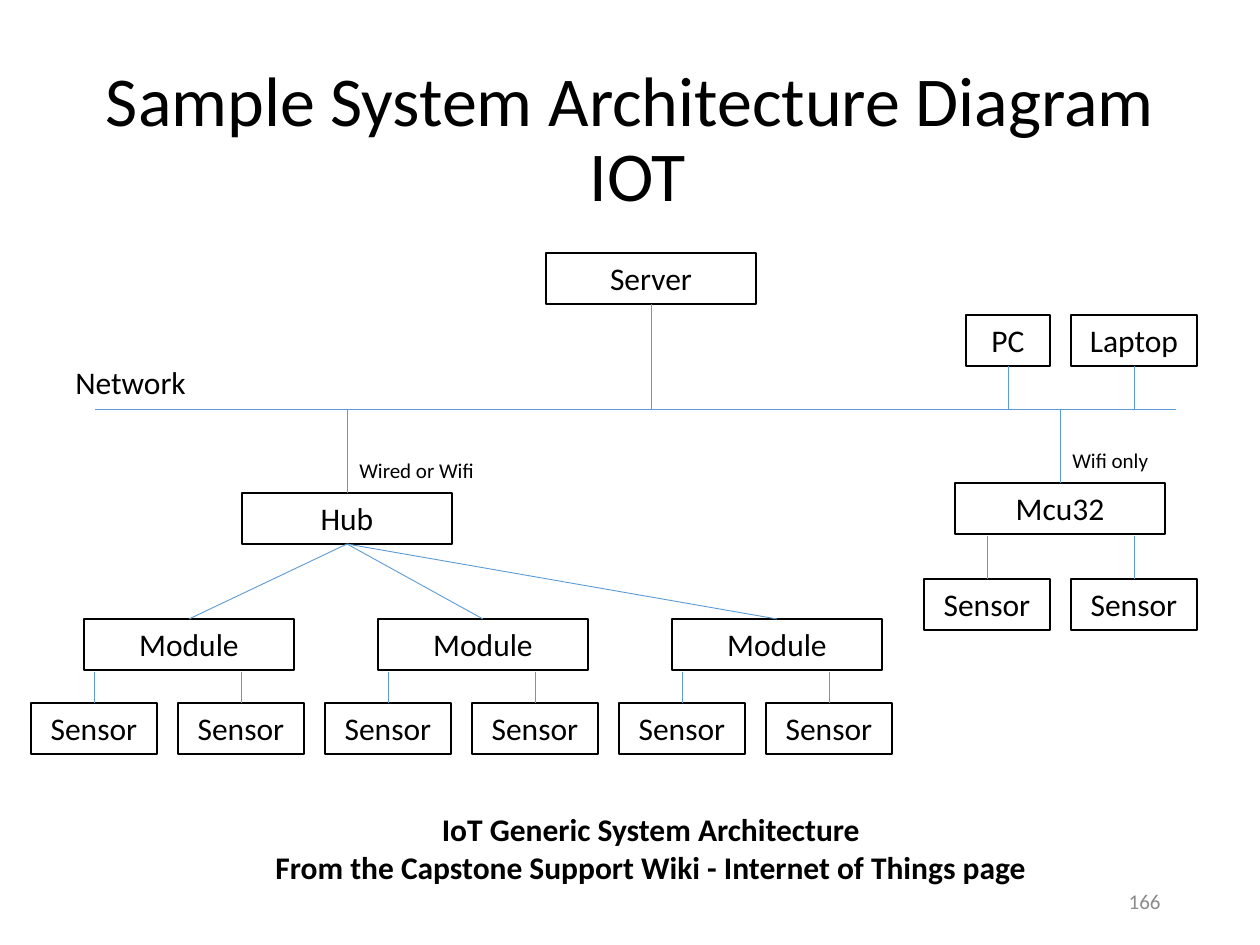
from lxml import etree
from pptx import Presentation
from pptx import util as u
from pptx.dml.color import RGBColor
from pptx.enum import shapes, text
from pptx.oxml.ns import qn

PX = 914400 / 126
FONT = "Calibri"
BLACK, WHITE, BLUE, GREY = "000000", "FFFFFF", "5B9BD5", "8C8C8C"
LEFT, CENTER, RIGHT = text.PP_ALIGN.LEFT, text.PP_ALIGN.CENTER, text.PP_ALIGN.RIGHT
TOP, BOTTOM = 0, 2
BOX_HEIGHT, WIDE, NARROW = 51, 210, 126
NETWORK_Y, NETWORK_LEFT, NETWORK_RIGHT = 409, 95, 1176
MODULE_Y, MODULE_X, MODULE_PITCH, MODULE_COUNT = 619, 84, 294, 3
SENSOR_Y, SENSOR_X, SENSOR_PITCH, SENSOR_COUNT = 703, 31, 147, 6
RADIO_SENSOR_Y, RADIO_SENSOR_X = 579, 924
MODULE_BOTTOM, RADIO_BOTTOM = 672, 536

NETWORK_BOXES = {
    "Server": (546, 253, WIDE, BOTTOM),
    "PC": (966, 315, 84, BOTTOM),
    "Laptop": (1071, 315, NARROW, BOTTOM),
    "Hub": (242, 493, WIDE, TOP),
    "Mcu32": (955, 483, WIDE, TOP),
}
LABELS = [
    ("Network", 63, 357, 137, 51, 18),
    ("Wifi only", 1060, 441, 102, 38, 12),
    ("Wired or Wifi", 347, 451, 141, 38, 12),
]
TITLE = ["Sample System Architecture Diagram", " IOT"]
CAPTION = [
    "IoT Generic System Architecture",
    "From the Capstone Support Wiki - Internet of Things page",
]
PAGE_NUMBER = "166"


def px(value):
    return u.Emu(round(value * PX))


def color(value):
    return RGBColor.from_string(value)


def add_run(paragraph, words, size, shade=BLACK, bold=False):
    run = paragraph.add_run()
    run.text = words
    run.font.name = FONT
    run.font.size = u.Pt(size)
    run.font.bold = bold
    run.font.color.rgb = color(shade)


def add_text(slide, lines, left, top, width, height, size, align=LEFT,
             anchor=text.MSO_ANCHOR.TOP, wrap=False, shade=BLACK, bold=False):
    shape = slide.shapes.add_textbox(px(left), px(top), px(width), px(height))
    frame = shape.text_frame
    frame.word_wrap = wrap
    frame.vertical_anchor = anchor
    for index, line in enumerate(lines):
        paragraph = frame.add_paragraph() if index else frame.paragraphs[0]
        paragraph.alignment = align
        add_run(paragraph, line, size, shade, bold)
    return shape


def add_title(slide):
    shape = add_text(slide, TITLE[:1], 87, 50, 1086, 183, 40, CENTER,
                     text.MSO_ANCHOR.MIDDLE, True)
    paragraph = shape.text_frame.paragraphs[0]
    paragraph.line_spacing = 0.9
    paragraph.add_line_break()
    add_run(paragraph, TITLE[1], 40)


def add_box(slide, words, left, top, width):
    shape = slide.shapes.add_shape(shapes.MSO_SHAPE.RECTANGLE,
                                   px(left), px(top), px(width), px(BOX_HEIGHT))
    shape.shadow.inherit = False
    shape.fill.solid()
    shape.fill.fore_color.rgb = color(WHITE)
    shape.line.color.rgb = color(BLACK)
    shape.line.width = u.Pt(1)
    frame = shape.text_frame
    frame.vertical_anchor = text.MSO_ANCHOR.TOP
    paragraph = frame.paragraphs[0]
    paragraph.alignment = CENTER
    add_run(paragraph, words, 18)
    return shape


def add_line(slide, x1, y1, x2, y2):
    line = slide.shapes.add_connector(shapes.MSO_CONNECTOR.STRAIGHT, x1, y1, x2, y2)
    line.line.color.rgb = color(BLUE)
    line.line.width = u.Pt(0.5)
    etree.SubElement(line._element.spPr, qn("a:effectLst"))
    return line


def add_drop(slide, box, side, end_y):
    center = box.left + box.width // 2
    start_y = box.top if side == TOP else box.top + box.height
    line = add_line(slide, center, start_y, center, px(end_y))
    line.begin_connect(box, side)


def add_sensors(slide, count, left, top, end_y):
    for index in range(count):
        sensor = add_box(slide, "Sensor", left + index * SENSOR_PITCH, top, NARROW)
        add_drop(slide, sensor, TOP, end_y)


def main():
    presentation = Presentation()
    presentation.slide_width = px(1260)
    presentation.slide_height = px(945)
    slide = presentation.slides.add_slide(presentation.slide_layouts[6])

    add_title(slide)
    add_line(slide, px(NETWORK_LEFT), px(NETWORK_Y), px(NETWORK_RIGHT), px(NETWORK_Y))
    boxes = {}
    for name, (left, top, width, side) in NETWORK_BOXES.items():
        boxes[name] = add_box(slide, name, left, top, width)
        add_drop(slide, boxes[name], side, NETWORK_Y)

    for index in range(MODULE_COUNT):
        module = add_box(slide, "Modules"[:-1], MODULE_X + index * MODULE_PITCH,
                         MODULE_Y, WIDE)
        branch = add_line(slide, 0, 0, module.left, module.top)
        branch.begin_connect(boxes["Hub"], BOTTOM)
        branch.end_connect(module, TOP)

    add_sensors(slide, SENSOR_COUNT, SENSOR_X, SENSOR_Y, MODULE_BOTTOM)
    add_sensors(slide, 2, RADIO_SENSOR_X, RADIO_SENSOR_Y, RADIO_BOTTOM)

    for words, left, top, width, height, size in LABELS:
        add_text(slide, [words], left, top, width, height, size)
    add_text(slide, CAPTION, 260, 804, 782, 89, 18, CENTER, bold=True)
    add_text(slide, [PAGE_NUMBER], 890, 876, 283, 50, 12, RIGHT,
             text.MSO_ANCHOR.MIDDLE, True, GREY)
    presentation.save("out.pptx")


if __name__ == "__main__":
    main()
